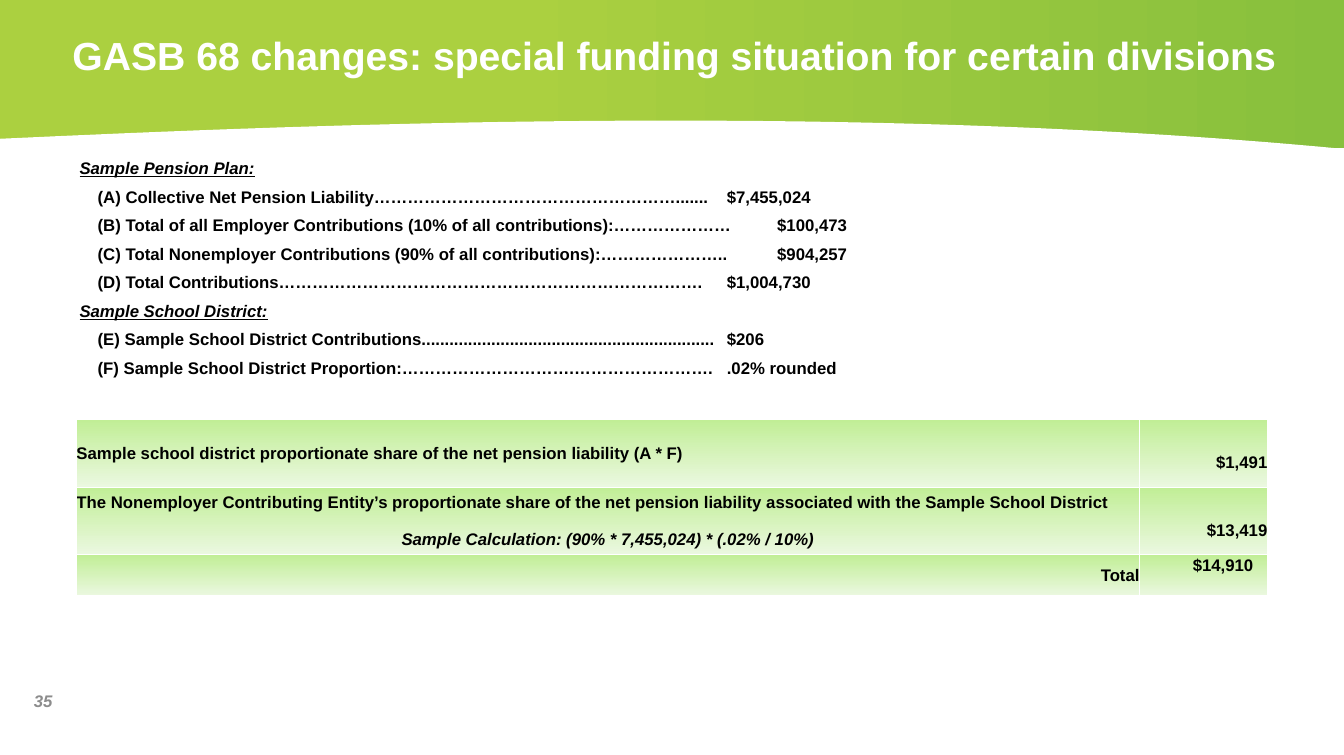
import pptx
import pptx.dml.color
import pptx.enum.shapes
import pptx.enum.text
import pptx.oxml
import pptx.oxml.ns
import pptx.util
from pptx.util import Inches

COLORS = {"band_start": "ABD040", "band_end": "88C03D", "white": "FFFFFF", "text": "000000",
          "number": "8C8C8C", "cell_top": "C1EE96", "cell_bottom": "EBF8E0"}
ALIGN = pptx.enum.text.PP_ALIGN
ANCHOR = pptx.enum.text.MSO_ANCHOR

PLAN = ("Sample Pension Plan:", [
    ("(A) Collective Net Pension Liability……………………………………………….......", "$7,455,024", 6.55),
    ("(B) Total of all Employer Contributions (10% of all contributions):…………………", "$100,473", 6.78),
    ("(C) Total Nonemployer Contributions (90% of all contributions):…………………..", "$904,257", 6.78),
    ("(D) Total Contributions………………………………………………………………….", "$1,004,730", 6.54)])
DISTRICT = ("Sample School District:", [
    ("(E) Sample School District Contributions...............................................................",
     "$206", 6.61),
    ("(F) Sample School District Proportion:………………………….…………………….", ".02% rounded", 6.6)])


def rgb(name):
    """Return the named colour."""
    return pptx.dml.color.RGBColor.from_string(COLORS[name])


def add_span(para, text, size=12, color="text", italic=False, underline=False):
    """Add one bold Arial run to a paragraph."""
    span = para.add_run()
    span.text = text
    span.font.name = "Arial"
    span.font.size = pptx.util.Pt(size)
    span.font.bold = True
    span.font.italic = italic
    span.font.underline = underline
    span.font.color.rgb = rgb(color)


def set_gradient(fill, start, end, angle, start_position=0):
    """Fill with a two-stop linear gradient."""
    fill.gradient()
    fill.gradient_angle = angle
    for stop, color, position in zip(fill.gradient_stops, (start, end), (start_position, 1)):
        stop.color.rgb = rgb(color)
        stop.position = position


def set_frame(frame, margins, anchor):
    """Set wrapping, margins (left, top, right, bottom) and anchor of a text frame."""
    frame.word_wrap = True
    frame.vertical_anchor = anchor
    frame.margin_left, frame.margin_top, frame.margin_right, frame.margin_bottom = map(Inches, margins)


def add_header(page, left, top, width, height):
    """Draw the green band and the white curve that cuts its lower edge."""
    band = page.shapes.add_shape(pptx.enum.shapes.MSO_SHAPE.RECTANGLE, Inches(left), Inches(top),
                                 Inches(width), Inches(height))
    set_gradient(band.fill, "band_start", "band_end", 0, 0.38)
    controls = [(left, top + 1.38), (left + 2.86, top + 1.25),
                (left + 8.36, top + 1), (left + width, top + 1.48)]
    steps = 60
    points = []
    for step in range(steps + 1):
        t = step / steps
        weights = ((1 - t) ** 3, 3 * t * (1 - t) ** 2, 3 * t * t * (1 - t), t ** 3)
        points.append(tuple(Inches(sum(weight * control[axis] for weight, control in zip(weights, controls)))
                            for axis in (0, 1)))
    bottom = Inches(top + 2.26)
    points += [(Inches(left + width), bottom), (Inches(left), bottom)]
    builder = page.shapes.build_freeform(*points[0], scale=1)
    builder.add_line_segments(points[1:], close=True)
    curve = builder.convert_to_shape()
    curve.fill.solid()
    curve.fill.fore_color.rgb = rgb("white")
    for shape in (band, curve):
        shape.line.fill.background()
        shape.shadow.inherit = False


def add_title(page, left, top, width, height):
    """Place the title placeholder in front of the band."""
    title = page.shapes.title
    title.left, title.top, title.width, title.height = map(Inches, (left, top, width, height))
    title.element.getparent().append(title.element)
    set_frame(title.text_frame, (0.13, 0, 0.13, 0.07), ANCHOR.TOP)
    title.text_frame.auto_size = pptx.enum.text.MSO_AUTO_SIZE.NONE
    para = title.text_frame.paragraphs[0]
    para.alignment = ALIGN.LEFT
    add_span(para, "GASB 68 changes: special funding situation for certain divisions", 28, "white")


def add_figures(page, left, top, width, height):
    """List the sample figures, each value set at a tab stop."""
    box = page.shapes.add_textbox(*map(Inches, (left, top, width, height)))
    frame = box.text_frame
    set_frame(frame, (0.13, 0.07, 0.13, 0.07), ANCHOR.TOP)
    for heading, rows in (PLAN, DISTRICT):
        for text, value, stop in [(heading, None, None)] + rows:
            first = not frame.paragraphs[0].runs
            para = frame.paragraphs[0] if first else frame.add_paragraph()
            properties = para._p.get_or_add_pPr()
            properties.set("marL", "0")
            properties.set("indent", str(Inches(0.25 if value else 0.07)))
            para.space_before = pptx.util.Pt(0 if first else 3)
            para.space_after = pptx.util.Pt(3)
            if value:
                properties.append(pptx.oxml.parse_xml(
                    f'<a:tabLst {pptx.oxml.ns.nsdecls("a")}><a:tab pos="{Inches(stop)}" algn="l"/></a:tabLst>'))
                add_span(para, f"{text}\t{value}")
            else:
                add_span(para, text, italic=True, underline=True)


def format_cell(cell, margins, alignment, text):
    """Fill, border and write one table cell."""
    set_gradient(cell.fill, "cell_top", "cell_bottom", 270)
    for index, side in enumerate("LRTB"):
        cell._tc.get_or_add_tcPr().insert(index, pptx.oxml.parse_xml(
            f'<a:ln{side} {pptx.oxml.ns.nsdecls("a")} w="12700"><a:solidFill>'
            f'<a:srgbClr val="{COLORS["white"]}"/></a:solidFill></a:ln{side}>'))
    cell.vertical_anchor = ANCHOR.MIDDLE
    cell.margin_left, cell.margin_top, cell.margin_right, cell.margin_bottom = map(Inches, margins)
    para = cell.text_frame.paragraphs[0]
    para.alignment = alignment
    add_span(para, text)


def add_shares(page, left, top, width, height):
    """Build the table of proportionate shares."""
    table = page.shapes.add_table(3, 2, *map(Inches, (left, top, width, height))).table
    table.first_row = False
    table.horz_banding = False
    value_width = 1.27
    table.columns[0].width = Inches(width - value_width)
    table.columns[1].width = Inches(value_width)
    for row, row_height in zip(table.rows, (0.67, 0.67, height - 1.34)):
        row.height = Inches(row_height)
    flush, lowered, raised = (0, 0, 0, 0), (0, 0.19, 0, 0), (0, 0, 0.14, 0.19)
    rows = [
        ("Sample school district proportionate share of the net pension liability (A * F)",
         ALIGN.LEFT, "$1,491", lowered),
        ("The Nonemployer Contributing Entity’s proportionate share of the net pension liability "
         "associated with the Sample School District", ALIGN.LEFT, "$13,419", lowered),
        ("Total", ALIGN.RIGHT, "$14,910", raised)]
    for index, (label, alignment, value, margins) in enumerate(rows):
        format_cell(table.cell(index, 0), flush, alignment, label)
        format_cell(table.cell(index, 1), margins, ALIGN.RIGHT, value)
    para = table.cell(1, 0).text_frame.add_paragraph()
    para.alignment = ALIGN.CENTER
    para.space_before = pptx.util.Pt(13)
    add_span(para, "Sample Calculation: (90% * 7,455,024) * (.02% / 10%)", italic=True)


def add_page_number(page, left, top, width, height):
    """Write the page number."""
    box = page.shapes.add_textbox(*map(Inches, (left, top, width, height)))
    set_frame(box.text_frame, (0.1, 0.05, 0.1, 0.05), ANCHOR.MIDDLE)
    para = box.text_frame.paragraphs[0]
    para.alignment = ALIGN.RIGHT
    add_span(para, "35", color="number", italic=True)


def main():
    """Build and save the deck."""
    deck = pptx.Presentation()
    deck.slide_width = Inches(13.35)
    deck.slide_height = Inches(7.5)
    page = deck.slides.add_slide(deck.slide_layouts[5])
    add_header(page, -0.03, 0, 13.38, 1.47)
    add_title(page, 0.59, 0.31, 12.31, 0.75)
    add_figures(page, 0.59, 1.5, 11.67, 2.33)
    add_page_number(page, 0.18, 6.76, 0.44, 0.4)
    add_shares(page, 0.76, 4.17, 11.83, 1.75)
    deck.save("out.pptx")


if __name__ == "__main__":
    main()
